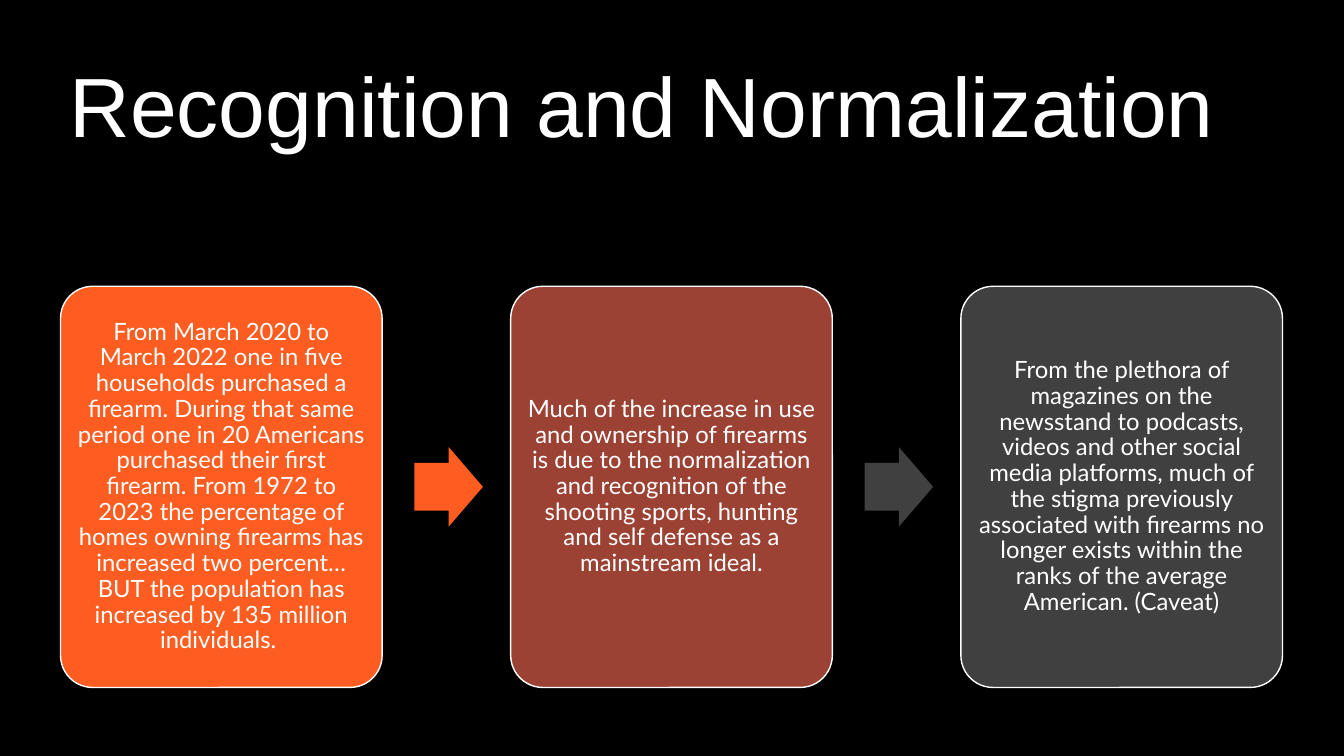
from pptx import Presentation
from pptx import util as u
from pptx.dml.color import RGBColor
from pptx.enum import shapes, text

COLORS = {"black": "000000", "white": "FFFFFF", "orange": "FE5D21",
          "brick": "9B4234", "gray": "404040"}

# Card grid, in inches
LEFT, TOP, PITCH = 0.6, 2.84, 4.465
CARD_W, CARD_H = 3.19, 3.98
ARROW_W, ARROW_H = 0.68, 0.79

# Card colour, colour of the arrow that follows, text
STEPS = [
    ("orange", "orange",
     "From March 2020 to March 2022 one in five households purchased a firearm. "
     "During that same period one in 20 Americans purchased their first firearm. "
     "From 1972 to 2023 the percentage of homes owning firearms has increased "
     "two percent…BUT the population has increased by 135 million individuals. "),
    ("brick", "gray",
     "Much of the increase in use and ownership of firearms is due to the "
     "normalization and recognition of the shooting sports, hunting and self "
     "defense as a mainstream ideal."),
    ("gray", None,
     "From the plethora of magazines on the newsstand to podcasts, videos and "
     "other social media platforms, much of the stigma previously associated "
     "with firearms no longer exists within the ranks of the average American. "
     "(Caveat)"),
]


def add_filled(kind, left, top, width, height, color, adjustments):
    sp = slide.shapes.add_shape(kind, *map(u.Inches, (left, top, width, height)))
    sp.shadow.inherit = False
    sp.fill.solid()
    sp.fill.fore_color.rgb = RGBColor.from_string(COLORS[color])
    sp.line.fill.background()
    for i, value in enumerate(adjustments):
        sp.adjustments[i] = value
    return sp


def write(tf, words, font, size, align, frame_format):
    """Fill a text frame with one white paragraph."""
    for name, value in frame_format.items():
        setattr(tf, name, value)
    p = tf.paragraphs[0]
    p.alignment = align
    p.line_spacing = 0.9
    r = p.add_run()
    r.text = words
    r.font.name = font
    r.font.size = u.Pt(size)
    r.font.color.rgb = RGBColor.from_string(COLORS["white"])


prs = Presentation()
prs.slide_width, prs.slide_height = u.Inches(13.33), u.Inches(7.5)
slide = prs.slides.add_slide(prs.slide_layouts[5])
slide.background.fill.solid()
slide.background.fill.fore_color.rgb = RGBColor.from_string(COLORS["black"])

title = slide.shapes.title
title_box = {"left": 0.59, "top": 0.59, "width": 12.14, "height": 1.98}
for name, value in title_box.items():
    setattr(title, name, u.Inches(value))
write(title.text_frame, "Recognition and Normalization", "Arial", 60,
      text.PP_ALIGN.LEFT,
      {"word_wrap": True, "auto_size": text.MSO_AUTO_SIZE.NONE,
       "vertical_anchor": text.MSO_ANCHOR.TOP})

card_format = {"word_wrap": True, "vertical_anchor": text.MSO_ANCHOR.MIDDLE}
for side in ("left", "right", "top", "bottom"):
    card_format["margin_" + side] = u.Inches(0.07)

for i, (card_color, arrow_color, words) in enumerate(STEPS):
    x = LEFT + i * PITCH
    card = add_filled(shapes.MSO_SHAPE.ROUNDED_RECTANGLE, x, TOP,
                      CARD_W, CARD_H, card_color, [0.1])
    card.line.color.rgb = RGBColor.from_string(COLORS["white"])
    card.line.width = u.Pt(1)
    write(card.text_frame, words, "Lato", 17, text.PP_ALIGN.CENTER, card_format)
    if arrow_color:
        add_filled(shapes.MSO_SHAPE.RIGHT_ARROW, x + CARD_W + 0.32,
                   TOP + (CARD_H - ARROW_H) / 2, ARROW_W, ARROW_H,
                   arrow_color, [0.6, 0.5])

prs.save("out.pptx")
